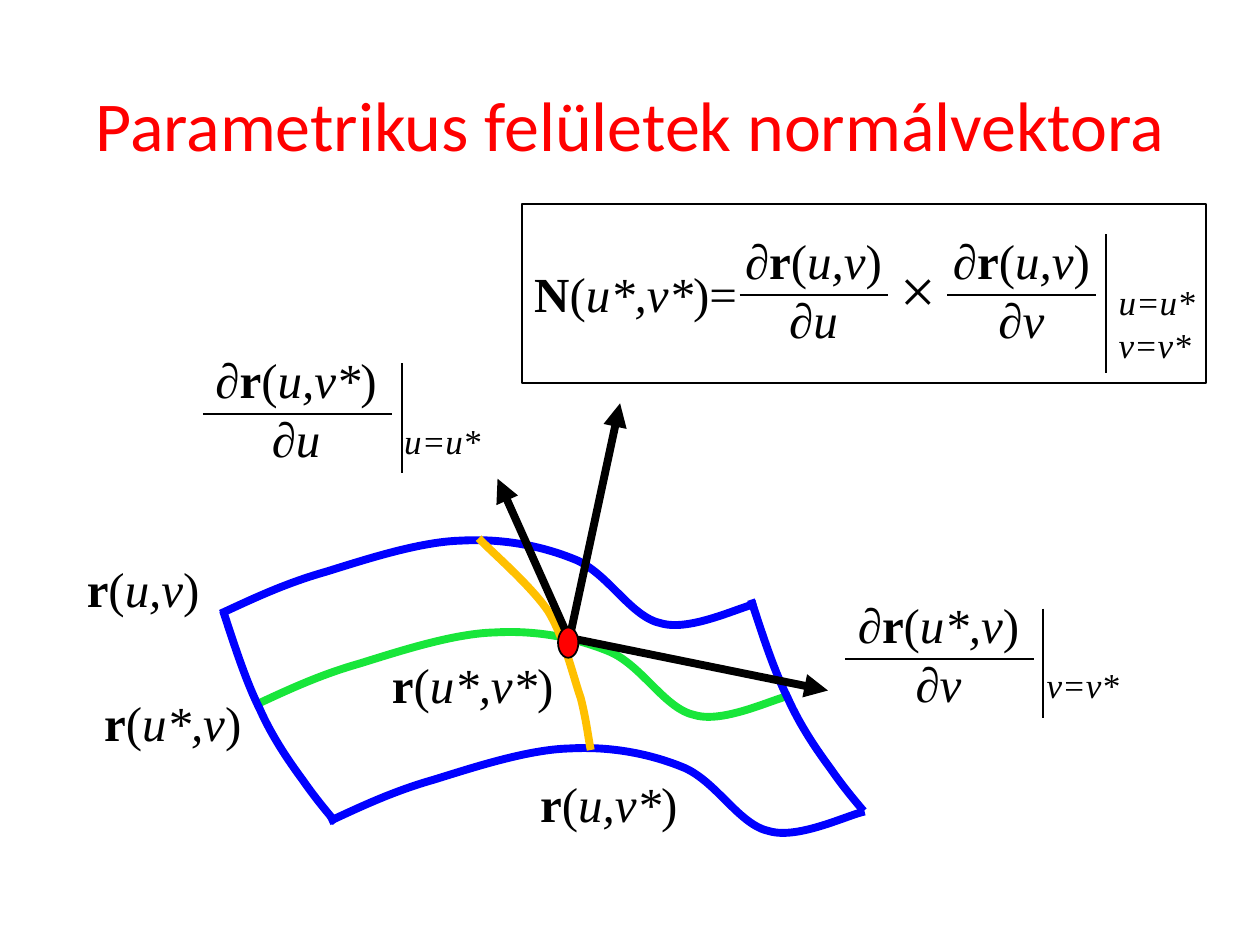
from lxml import etree
from pptx import Presentation
from pptx.dml.color import RGBColor
from pptx.enum.shapes import MSO_CONNECTOR, MSO_SHAPE
from pptx.enum.text import MSO_ANCHOR, MSO_AUTO_SIZE, PP_ALIGN
from pptx.oxml.ns import qn
from pptx.util import Cm, Pt

STRAIGHT = MSO_CONNECTOR.STRAIGHT
RECTANGLE, OVAL = MSO_SHAPE.RECTANGLE, MSO_SHAPE.OVAL
LEFT, CENTER = PP_ALIGN.LEFT, PP_ALIGN.CENTER
TOP, MIDDLE = MSO_ANCHOR.TOP, MSO_ANCHOR.MIDDLE
NO_GROW, GROW = MSO_AUTO_SIZE.NONE, MSO_AUTO_SIZE.SHAPE_TO_FIT_TEXT

COLORS = {"black": "000000", "red": "FF0000", "blue": "0000FF",
          "green": "18E63A", "orange": "FFC000"}
THIN, THICK = 1, 4.5
MATH = {"name": "Times New Roman", "size": Pt(28)}
SMALL = {**MATH, "size": Pt(20), "italic": True}
TIMES = {**MATH, "size": Pt(36)}
HEADING = {"name": "Calibri", "size": Pt(40)}
BOLD, ITALIC, PLAIN = {"bold": True}, {"italic": True}, {}

TITLE = "Parametrikus felületek normálvektora"

WAVE = [(0.65, -0.3), (1.3, -0.61), (2.11, -0.84),
        (2.92, -1.09), (4.01, -1.45), (4.85, -1.47),
        (5.72, -1.52), (6.53, -1.35), (7.19, -1.07),
        (7.85, -0.76), (8.28, 0.08), (8.89, 0.2),
        (9.47, 0.36), (10.46, -0.13), (10.8, -0.2)]
SIDE = [(0.23, 0.7), (0.46, 1.42), (0.74, 1.98),
        (0.99, 2.54), (1.32, 3.02), (1.6, 3.4),
        (1.85, 3.76), (2.06, 4.01), (2.27, 4.26)]
CROSSING = [(0.23, 0.25), (1.04, 0.94), (1.4, 1.47),
            (1.73, 2.01), (1.9, 2.77), (2.06, 3.23),
            (2.18, 3.71), (2.21, 4.04), (2.26, 4.27)]
CURVES = [
    (5.13, 14.22, WAVE, "green"),
    (4.45, 12.37, WAVE, "blue"),
    (6.63, 16.56, WAVE, "blue"),
    (15.14, 12.09, SIDE, "blue"),
    (4.5, 12.32, SIDE, "blue"),
    (9.65, 10.85, CROSSING, "orange"),
]
LABELS = [
    (1.5, 11.13, 2.79, "r", "u,v", ")"),
    (1.85, 13.84, 3.28, "r", "u*,v", ")"),
    (10.64, 15.47, 3.28, "r", "u,v*", ")"),
    (7.65, 13.06, 3.78, "r", "u*,v*", ")"),
    (10.52, 5.18, 4.65, "N", "u*,v*", ")="),
]
FRACTIONS = [
    (17.04, 11.86, 3.76, "u*,v", "v", 17.04, 20.85),
    (4.09, 6.93, 3.76, "u,v*", "u", 4.09, 7.9),
    (14.76, 4.52, 3.28, "u,v", "u", 14.91, 17.91),
    (18.95, 4.52, 3.28, "u,v", "v", 19.1, 22.1),
]
CONDITIONS = [
    (20.85, 13.26, 2.26, 1.27, ["v=v*"]),
    (7.9, 8.33, 2.36, 1.27, ["u=u*"]),
    (22.3, 5.54, 2.36, 2.29, ["u=u*", "v=v*"]),
]
EVALUATION_BARS = [(21.03, 12.27, 14.48), (8.1, 7.32, 9.53), (22.3, 4.72, 7.52)]
ARROWS = [
    (11.46, 12.85, 10.03, 9.65),
    (11.51, 12.73, 12.5, 8.13),
    (11.43, 12.85, 16.69, 13.92),
]
LABEL_HEIGHT, FRACTION_HEIGHT, BAR_DROP = 1.45, 2.62, 1.42


def rgb(color):
    return RGBColor.from_string(COLORS[color])


def set_line(shape, color, width):
    shape.line.color.rgb = rgb(color)
    shape.line.width = Pt(width)


def add_text(page, place, paragraphs, base, color="black", align=LEFT,
             anchor=TOP, grow=GROW, wrap=False):
    box = page.shapes.add_textbox(*map(Cm, place))
    frame = box.text_frame
    for name, value in {"word_wrap": wrap, "auto_size": grow,
                        "vertical_anchor": anchor}.items():
        setattr(frame, name, value)
    for index, spans in enumerate(paragraphs):
        para = frame.add_paragraph() if index else frame.paragraphs[0]
        para.alignment = align
        for text, style in spans:
            span = para.add_run()
            span.text = text
            span.font.color.rgb = rgb(color)
            for name, value in {**base, **style}.items():
                setattr(span.font, name, value)


def function_spans(name, arguments, ending=")"):
    return [(name, BOLD), ("(", PLAIN), (arguments, ITALIC), (ending, PLAIN)]


def add_line(page, ends, width=THIN, arrow=False):
    line = page.shapes.add_connector(STRAIGHT, *map(Cm, ends))
    set_line(line, "black", width)
    if arrow:
        etree.SubElement(line.line._get_or_add_ln(), qn("a:tailEnd"), type="triangle")
    etree.SubElement(line._element.spPr, qn("a:effectLst"))


def add_curve(page, left, top, controls, color):
    builder = page.shapes.build_freeform(Cm(left), Cm(top))
    builder.add_line_segments(
        [(Cm(left + x), Cm(top + y)) for x, y in controls], close=False)
    curve = builder.convert_to_shape()
    segments = list(curve._element.iter(qn("a:lnTo")))
    outline = segments[0].getparent()
    for start in range(0, len(segments), 3):
        bezier = etree.SubElement(outline, qn("a:cubicBezTo"))
        for segment in segments[start:start + 3]:
            bezier.append(segment[0])
            outline.remove(segment)
    curve.shadow.inherit = False
    curve.fill.background()
    set_line(curve, color, THICK)


def add_outlined(page, kind, place, fill=None):
    shape = page.shapes.add_shape(kind, *map(Cm, place))
    shape.shadow.inherit = False
    set_line(shape, "black", THIN)
    if fill:
        shape.fill.solid()
        shape.fill.fore_color.rgb = rgb(fill)
    else:
        shape.fill.background()


def main():
    deck = Presentation()
    deck.slide_width, deck.slide_height = Cm(25.4), Cm(19.05)
    page = deck.slides.add_slide(deck.slide_layouts[6])

    add_text(page, (0, 0.91, 25.4, 3.18), [[(TITLE, PLAIN)]], HEADING,
             color="red", align=CENTER, anchor=MIDDLE, grow=NO_GROW, wrap=True)
    for curve in CURVES:
        add_curve(page, *curve)
    for left, top, width, name, arguments, ending in LABELS:
        add_text(page, (left, top, width, LABEL_HEIGHT),
                 [function_spans(name, arguments, ending)], MATH)
    for left, top, width, arguments, variable, bar_start, bar_end in FRACTIONS:
        add_text(page, (left, top, width, FRACTION_HEIGHT),
                 [function_spans("∂r", arguments), [("∂", BOLD), (variable, ITALIC)]],
                 MATH, align=CENTER)
        add_line(page, (bar_start, top + BAR_DROP, bar_end, top + BAR_DROP))
    for *place, conditions in CONDITIONS:
        add_text(page, place, [[(text, PLAIN)] for text in conditions], SMALL)
    for x, top, bottom in EVALUATION_BARS:
        add_line(page, (x, top, x, bottom))
    add_text(page, (17.91, 4.93, 1.22, 1.78), [[("×", PLAIN)]], TIMES)
    add_outlined(page, RECTANGLE, (10.52, 4.11, 13.79, 3.61))
    for ends in ARROWS:
        add_line(page, ends, THICK, arrow=True)
    add_outlined(page, OVAL, (11.25, 12.65, 0.41, 0.61), "red")

    deck.save("out.pptx")


if __name__ == "__main__":
    main()
